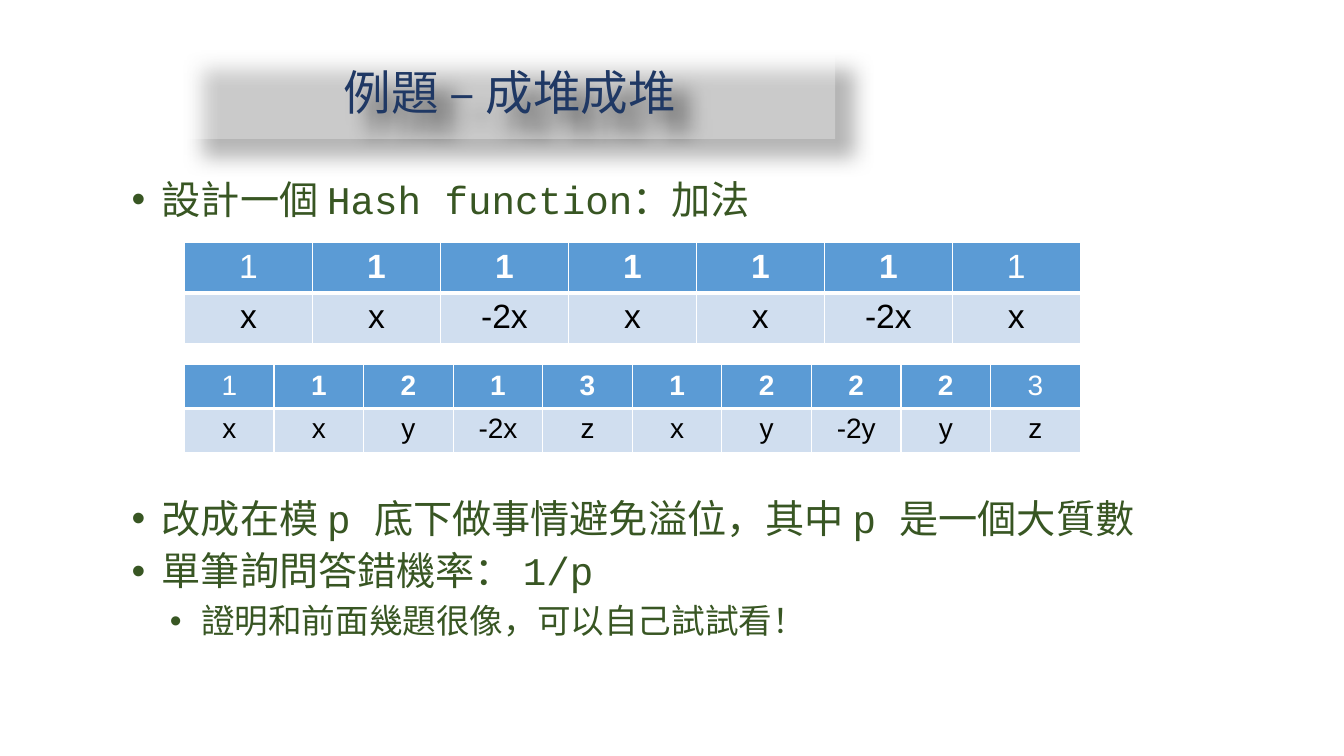
from dataclasses import dataclass

from lxml.etree import SubElement
from pptx import Presentation
from pptx.dml.color import RGBColor
from pptx.enum.text import MSO_ANCHOR, MSO_AUTO_SIZE, PP_ALIGN
from pptx.oxml.ns import qn
from pptx.util import Cm, Pt


@dataclass(frozen=True)
class Theme:
    title_color: str = "1F3864"
    body_color: str = "385623"
    header_fill: str = "5B9BD5"
    value_fill: str = "D0DEEF"
    white: str = "FFFFFF"
    black: str = "000000"
    code_font: str = "Courier New"
    table_font: str = "Arial"
    title_size: int = 34
    body_size: int = 28
    detail_size: int = 24


THEME = Theme()


def add_run(paragraph, text, font, size, color, bold=False):
    run = paragraph.add_run()
    run.text = text
    run.font.name = font
    run.font.size = Pt(size)
    run.font.bold = bold
    run.font.color.rgb = RGBColor.from_string(color)


def add_color(parent, color, alpha=None):
    rgb = SubElement(parent, qn("a:srgbClr"), val=color)
    if alpha is not None:
        SubElement(rgb, qn("a:alpha"), val=str(alpha * 1000))


prs = Presentation()
prs.slide_width, prs.slide_height = Cm(33.87), Cm(19.05)
slide = prs.slides.add_slide(prs.slide_layouts[5])

# Title with a translucent panel and a soft shadow
title = slide.shapes.title
title.left, title.top, title.width, title.height = Cm(4.65), Cm(1.3), Cm(16.4), Cm(2.2)
panel = SubElement(title._element.spPr, qn("a:solidFill"))
add_color(panel, THEME.white, 29)
effects = SubElement(title._element.spPr, qn("a:effectLst"))
shadow = SubElement(effects, qn("a:outerShdw"), blurRad=str(Pt(15)), dist=str(Pt(18)),
                    dir=str(45 * 60000), algn="tl", rotWithShape="0")
add_color(shadow, THEME.black, 29)
title.text_frame.auto_size = MSO_AUTO_SIZE.NONE
title.text_frame.vertical_anchor = MSO_ANCHOR.MIDDLE
heading = title.text_frame.paragraphs[0]
heading.alignment = PP_ALIGN.CENTER
heading.line_spacing = 0.9
add_run(heading, "例題 – 成堆成堆", THEME.code_font, THEME.title_size, THEME.title_color)

# Bullets: text, level, space before; the wide gap leaves room for the tables
points = [
    ("設計一個 Hash function：加法", 0, 0),
    ("改成在模 p 底下做事情避免溢位，其中 p 是一個大質數", 0, 197.5),
    ("單筆詢問答錯機率： 1/p", 0, 7.5),
    ("證明和前面幾題很像，可以自己試試看！", 1, 7.5),
]
levels = [(Cm(0.76), Cm(0.76), THEME.body_size), (Cm(1.75), Cm(0.79), THEME.detail_size)]
body = slide.shapes.add_textbox(Cm(3.07), Cm(4.42), Cm(29.2), Cm(14.02)).text_frame
body.word_wrap = True
for index, (text, level, gap) in enumerate(points):
    point = body.paragraphs[0] if index == 0 else body.add_paragraph()
    margin, hanging, size = levels[level]
    point.level = level
    properties = point._p.get_or_add_pPr()
    properties.set("marL", str(margin))
    properties.set("indent", str(-hanging))
    add_color(SubElement(properties, qn("a:buClr")), THEME.body_color)
    SubElement(properties, qn("a:buFont"), typeface=THEME.table_font)
    SubElement(properties, qn("a:buChar"), char="•")
    point.line_spacing = 0.9
    point.space_before = Pt(gap)
    add_run(point, text, THEME.code_font, size, THEME.body_color)

# Hash tables: top, text size, sequence, hash values
hash_tables = [
    (Cm(6.12), 24, "1 1 1 1 1 1 1", "x x -2x x x -2x x"),
    (Cm(9.19), 20, "1 1 2 1 3 1 2 2 2 3", "x x y -2x z x y -2y y z"),
]
table_width, row_height = Cm(22.58), Cm(1.03)
for top, size, sequence, values in hash_tables:
    rows = [sequence.split(), values.split()]
    count = len(rows[0])
    table = slide.shapes.add_table(2, count, Cm(4.65), top, table_width, 2 * row_height).table
    for column in table.columns:
        column.width = table_width // count
    for row, entries in enumerate(rows):
        is_header = row == 0
        for col, entry in enumerate(entries):
            cell = table.cell(row, col)
            # The rule between the rows is thicker than the others
            borders = {"L": 1, "R": 1, "T": 1 if is_header else 3, "B": 3 if is_header else 1}
            for side, weight in borders.items():
                line = SubElement(cell._tc.get_or_add_tcPr(), qn(f"a:ln{side}"), w=str(Pt(weight)))
                add_color(SubElement(line, qn("a:solidFill")), THEME.white)
            cell.fill.solid()
            cell.fill.fore_color.rgb = RGBColor.from_string(
                THEME.header_fill if is_header else THEME.value_fill)
            label = cell.text_frame.paragraphs[0]
            label.alignment = PP_ALIGN.CENTER
            add_run(label, entry, THEME.table_font, size,
                    THEME.white if is_header else THEME.black,
                    bold=is_header and 0 < col < count - 1)

prs.save("out.pptx")
